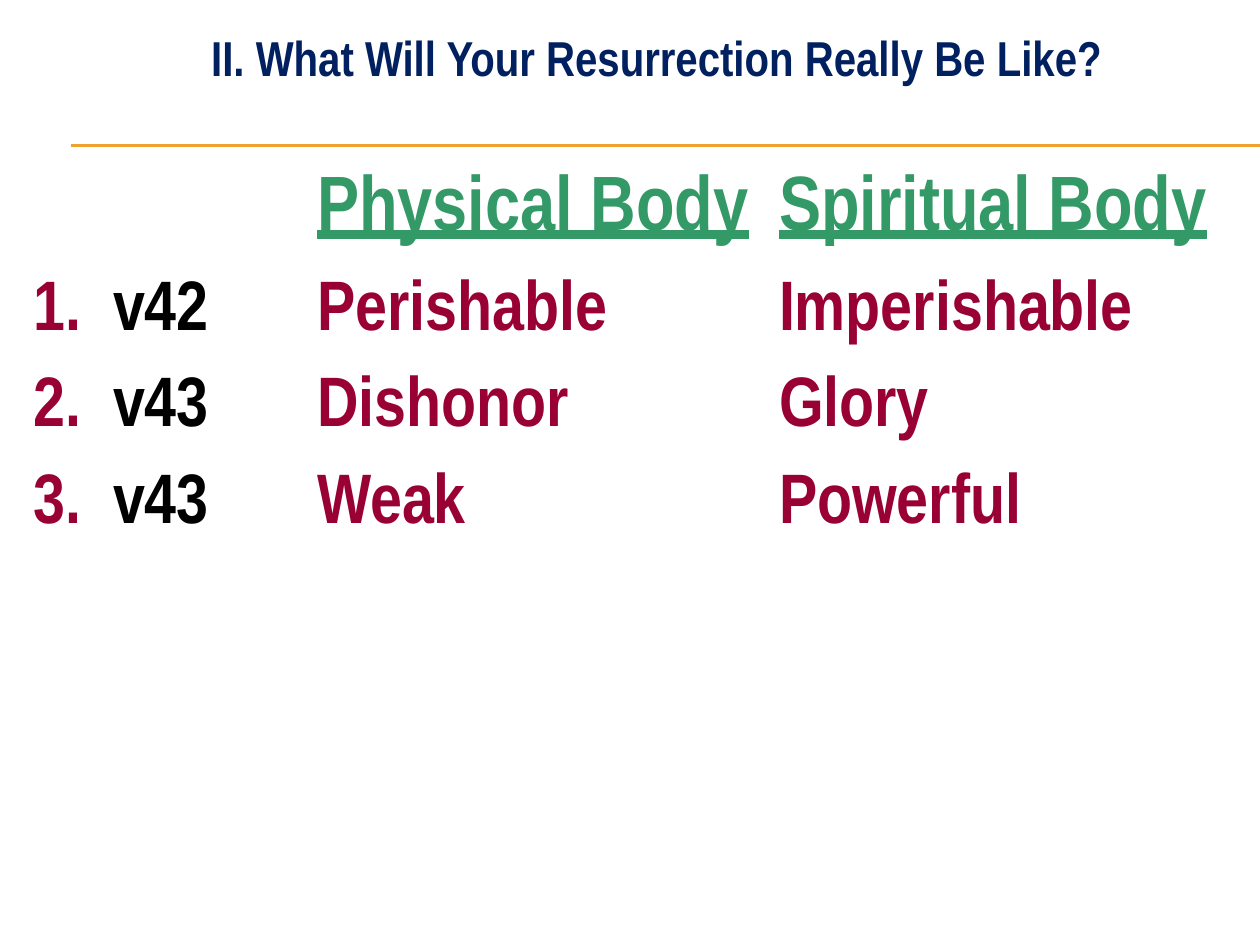
from lxml import etree
from pptx import Presentation
from pptx.dml.color import RGBColor
from pptx.enum import text
from pptx.oxml import ns
from pptx.util import Pt

FONT = "Arial Narrow"
NAVY = RGBColor(0x00, 0x20, 0x60)
GOLD = RGBColor(0xF0, 0xA2, 0x2E)
GREEN = RGBColor(0x33, 0x99, 0x66)
CRIMSON = RGBColor(0x99, 0x00, 0x33)
BLACK = RGBColor(0x00, 0x00, 0x00)

COL_WIDTHS = [162, 264, 270]
ROW_HEIGHTS = [60, 55.2, 55.2, 55.2]
VERSE_TAB = 45.4
HEADINGS = ["Physical Body", "Spiritual Body"]
CONTRASTS = [
    ("v42", "Perishable", "Imperishable"),
    ("v43", "Dishonor", "Glory"),
    ("v43", "Weak", "Powerful"),
]


def add_run(p, words, size, color, underline=False):
    r = p.add_run()
    r.text = words
    r.font.name = FONT
    r.font.size = Pt(size)
    r.font.bold = True
    r.font.underline = underline
    r.font.color.rgb = color


def add_tab_stop(p, position):
    tabs = etree.SubElement(p._p.get_or_add_pPr(), ns.qn("a:tabLst"))
    etree.SubElement(tabs, ns.qn("a:tab"), pos=str(Pt(position)), algn="l")


def place_title(s, left, top, width, height):
    sp = s.shapes.title
    sp.left, sp.top, sp.width, sp.height = Pt(left), Pt(top), Pt(width), Pt(height)
    tf = sp.text_frame
    tf.word_wrap = True
    tf.auto_size = text.MSO_AUTO_SIZE.SHAPE_TO_FIT_TEXT
    tf.vertical_anchor = text.MSO_ANCHOR.TOP
    p = tf.paragraphs[0]
    p.alignment = text.PP_ALIGN.CENTER
    add_run(p, "II. What Will Your Resurrection Really Be Like?", 28, NAVY)


def place_rules(s, left, top, right, gap):
    for y in (top, top + gap):
        line = s.shapes.add_connector(1, Pt(left), Pt(y), Pt(right), Pt(y))
        line.line.color.rgb = GOLD
        line.line.width = Pt(0.75)
        etree.SubElement(line._element.spPr, ns.qn("a:effectLst"))


def place_table(s, left, top):
    table = s.shapes.add_table(
        len(ROW_HEIGHTS), len(COL_WIDTHS), Pt(left), Pt(top),
        Pt(sum(COL_WIDTHS)), Pt(sum(ROW_HEIGHTS))).table
    table.first_row = table.horz_banding = False
    for column, width in zip(table.columns, COL_WIDTHS):
        column.width = Pt(width)
    for row, height in zip(table.rows, ROW_HEIGHTS):
        row.height = Pt(height)
    for cell in table.iter_cells():
        cell.fill.background()

    # Heading row
    for col, heading in enumerate(HEADINGS, 1):
        p = table.cell(0, col).text_frame.paragraphs[0]
        add_run(p, heading, 44, GREEN, underline=True)

    # Numbered verses with their contrasts
    for row, (verse, *words) in enumerate(CONTRASTS, 1):
        p = table.cell(row, 0).text_frame.paragraphs[0]
        add_tab_stop(p, VERSE_TAB)
        add_run(p, f"{row}.\t", 40, CRIMSON)
        add_run(p, verse, 40, BLACK)
        for col, word in enumerate(words, 1):
            add_run(table.cell(row, col).text_frame.paragraphs[0], word, 40, CRIMSON)


def main():
    prs = Presentation()
    prs.slide_width, prs.slide_height = Pt(720), Pt(540)
    s = prs.slides.add_slide(prs.slide_layouts[5])
    place_rules(s, 40.5, 82.8, 720, 0.6)
    place_table(s, 12, 96)
    place_title(s, 66, 12, 618, 41)
    prs.save("out.pptx")


if __name__ == "__main__":
    main()
